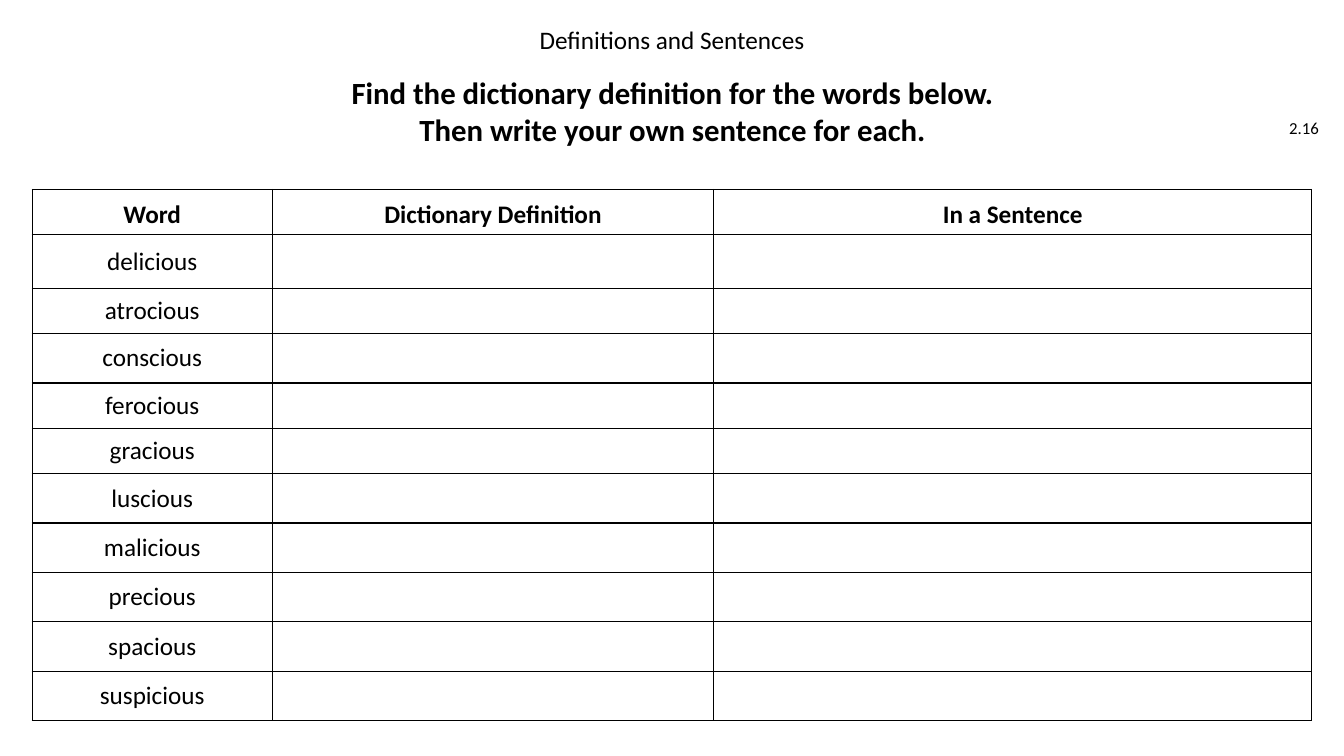
"""Build a worksheet slide with a table of words to define and use."""
from dataclasses import dataclass

from lxml import etree
from pptx import Presentation
from pptx.dml.color import RGBColor
from pptx.enum.text import MSO_ANCHOR, PP_ALIGN
from pptx.oxml.ns import qn
from pptx.util import Emu, Pt

PX = 9144
LEFT, MID, RIGHT = PP_ALIGN.LEFT, PP_ALIGN.CENTER, PP_ALIGN.RIGHT
TOP, MIDDLE, BOTTOM = MSO_ANCHOR.TOP, MSO_ANCHOR.MIDDLE, MSO_ANCHOR.BOTTOM
SIDES = ("a:lnL", "a:lnR", "a:lnT", "a:lnB")


@dataclass(frozen=True)
class Theme:
    font: str = "Calibri"
    ink: str = "000000"
    paper: str = "FFFFFF"
    head: int = 22
    body: int = 18
    note: int = 12
    rule: int = 1


THEME = Theme()
HEADS = ("Word", "Dictionary Definition", "In a Sentence")
WORDS = ("delicious", "atrocious", "conscious", "ferocious", "gracious",
         "luscious", "malicious", "precious", "spacious", "suspicious")
COLS = (238, 438, 593)
ROWS = (45, 53, 45, 49, 45, 45) + (49,) * 5


def px(num):
    return Emu(num * PX)


def style(para, size, bold=False, align=MID):
    para.alignment = align
    font = para.font
    font.name = THEME.font
    font.size = Pt(size)
    font.bold = bold
    font.color.rgb = RGBColor.from_string(THEME.ink)


def add_text(slide, box, lines, size, bold=False, align=MID, anchor=MIDDLE, lead=1.0):
    frame = slide.shapes.add_textbox(*map(px, box)).text_frame
    frame.word_wrap = True
    frame.vertical_anchor = anchor
    frame.text = "\n".join(lines)
    for para in frame.paragraphs:
        style(para, size, bold, align)
    frame.paragraphs[0].line_spacing = lead


def add_rules(cell):
    props = cell._tc.get_or_add_tcPr()
    for spot, side in enumerate(SIDES):
        line = etree.Element(qn(side), w=str(Pt(THEME.rule)))
        fill = etree.SubElement(line, qn("a:solidFill"))
        etree.SubElement(fill, qn("a:srgbClr"), val=THEME.ink)
        props.insert(spot, line)


def fill_cell(cell, text, head):
    cell.text = text
    cell.vertical_anchor = BOTTOM if head else MIDDLE
    cell.margin_left = cell.margin_right = px(11)
    cell.margin_top = cell.margin_bottom = px(5)
    cell.fill.solid()
    cell.fill.fore_color.rgb = RGBColor.from_string(THEME.paper)
    style(cell.text_frame.paragraphs[0], THEME.body, head)
    add_rules(cell)


def add_grid(slide, left, top):
    rows = [HEADS] + [(word, "", "") for word in WORDS]
    box = map(px, (left, top, sum(COLS), sum(ROWS)))
    table = slide.shapes.add_table(len(rows), len(COLS), *box).table
    table.horz_banding = False
    for col, width in zip(table.columns, COLS):
        col.width = px(width)
    for num, (row, high, texts) in enumerate(zip(table.rows, ROWS, rows)):
        row.height = px(high)
        for cell, text in zip(row.cells, texts):
            fill_cell(cell, text, num == 0)


def main():
    deck = Presentation()
    deck.slide_width, deck.slide_height = px(1333), px(750)
    slide = deck.slides.add_slide(deck.slide_layouts[6])
    add_text(slide, (1255, 107, 63, 40), ["2.16"], THEME.note, align=RIGHT)
    add_text(slide, (197, 60, 940, 82),
             ["Find the dictionary definition for the words below.",
              "Then write your own sentence for each."],
             THEME.head, bold=True, lead=1.5)
    add_text(slide, (382, 23, 569, 35), ["Definitions and Sentences"],
             THEME.body, anchor=TOP, lead=0.9)
    add_grid(slide, 32, 188)
    deck.save("out.pptx")


if __name__ == "__main__":
    main()
